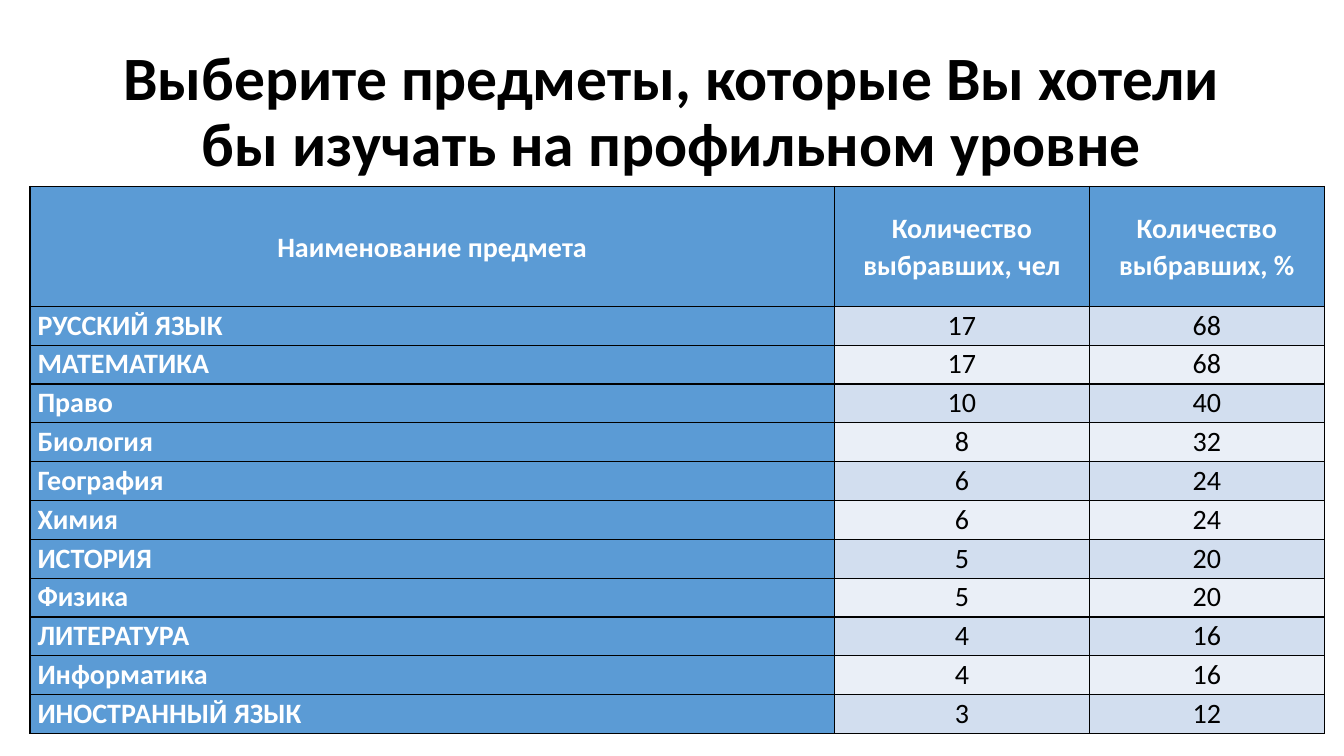
from typing import NamedTuple

from lxml import etree
from pptx import Presentation
from pptx.dml.color import RGBColor
from pptx.enum.text import MSO_ANCHOR, PP_ALIGN
from pptx.oxml.ns import qn
from pptx.util import Pt

LEFT, CENTER = PP_ALIGN.LEFT, PP_ALIGN.CENTER
TOP, MIDDLE = MSO_ANCHOR.TOP, MSO_ANCHOR.MIDDLE

FONT = "Calibri"
COLORS = {
    "black": "000000",
    "white": "FFFFFF",
    "blue": "5B9BD5",
    "odd_row": "D2DEEF",
    "even_row": "EAEFF7",
}
COLUMN_WIDTHS = (574.6, 182.2, 167.8)
HEADER_HEIGHT = 85.7
ROW_HEIGHT = 27.75


class Subject(NamedTuple):
    name: str
    students: int
    percent: int


class TextStyle(NamedTuple):
    size: float
    color: str
    bold: bool
    alignment: PP_ALIGN
    line_spacing: float


TITLE = TextStyle(44, "black", True, CENTER, 0.9)
HEADER = TextStyle(20, "white", True, CENTER, 1.06)
NAME = HEADER._replace(alignment=LEFT)
VALUE = HEADER._replace(color="black", bold=False)

HEADINGS = ("Наименование предмета", "Количество выбравших, чел", "Количество выбравших, %")
SUBJECTS = (
    Subject("РУССКИЙ ЯЗЫК", 17, 68),
    Subject("МАТЕМАТИКА", 17, 68),
    Subject("Право", 10, 40),
    Subject("Биология", 8, 32),
    Subject("География", 6, 24),
    Subject("Химия", 6, 24),
    Subject("ИСТОРИЯ", 5, 20),
    Subject("Физика", 5, 20),
    Subject("ЛИТЕРАТУРА", 4, 16),
    Subject("Информатика", 4, 16),
    Subject("ИНОСТРАННЫЙ ЯЗЫК", 3, 12),
)


def write_text(text_frame, text: str, style: TextStyle) -> None:
    paragraph = text_frame.paragraphs[0]
    paragraph.alignment = style.alignment
    paragraph.line_spacing = style.line_spacing
    run = paragraph.add_run()
    run.text = text
    run.font.name = FONT
    run.font.size = Pt(style.size)
    run.font.bold = style.bold
    run.font.color.rgb = RGBColor.from_string(COLORS[style.color])


def add_borders(cell) -> None:
    """Put a thin black line on all four sides; lines precede the fill in the schema."""
    properties = cell._tc.get_or_add_tcPr()
    for position, side in enumerate(("a:lnL", "a:lnR", "a:lnT", "a:lnB")):
        line = etree.Element(qn(side), w=str(Pt(1)))
        fill = etree.SubElement(line, qn("a:solidFill"))
        etree.SubElement(fill, qn("a:srgbClr"), val=COLORS["black"])
        properties.insert(position, line)


def fill_cell(cell, text: str, style: TextStyle, background: str, anchor: MSO_ANCHOR) -> None:
    cell.margin_left = cell.margin_right = Pt(5.4)
    cell.margin_top = cell.margin_bottom = Pt(0)
    cell.vertical_anchor = anchor
    cell.fill.solid()
    cell.fill.fore_color.rgb = RGBColor.from_string(COLORS[background])
    add_borders(cell)
    write_text(cell.text_frame, text, style)


def add_title(slide) -> None:
    shape = slide.shapes.add_textbox(Pt(66), Pt(28.75), Pt(828), Pt(104.4))
    shape.text_frame.word_wrap = True
    shape.text_frame.vertical_anchor = MIDDLE
    write_text(
        shape.text_frame,
        "Выберите предметы, которые Вы хотели бы изучать на профильном уровне",
        TITLE,
    )


def add_subject_table(slide) -> None:
    height = HEADER_HEIGHT + ROW_HEIGHT * len(SUBJECTS)
    table = slide.shapes.add_table(
        len(SUBJECTS) + 1, len(HEADINGS),
        Pt(21.4), Pt(133.2), Pt(sum(COLUMN_WIDTHS)), Pt(height),
    ).table
    for column, width in zip(table.columns, COLUMN_WIDTHS):
        column.width = Pt(width)
    for row in table.rows:
        row.height = Pt(ROW_HEIGHT)
    table.rows[0].height = Pt(HEADER_HEIGHT)

    for column, heading in enumerate(HEADINGS):
        fill_cell(table.cell(0, column), heading, HEADER, "blue", MIDDLE)
    for row, subject in enumerate(SUBJECTS, start=1):
        band = "odd_row" if row % 2 else "even_row"
        fill_cell(table.cell(row, 0), subject.name, NAME, "blue", TOP)
        for column, value in enumerate((subject.students, subject.percent), start=1):
            fill_cell(table.cell(row, column), str(value), VALUE, band, TOP)


def main() -> None:
    presentation = Presentation()
    presentation.slide_width, presentation.slide_height = Pt(960), Pt(540)
    slide = presentation.slides.add_slide(presentation.slide_layouts[6])
    add_title(slide)
    add_subject_table(slide)
    presentation.save("out.pptx")


if __name__ == "__main__":
    main()
